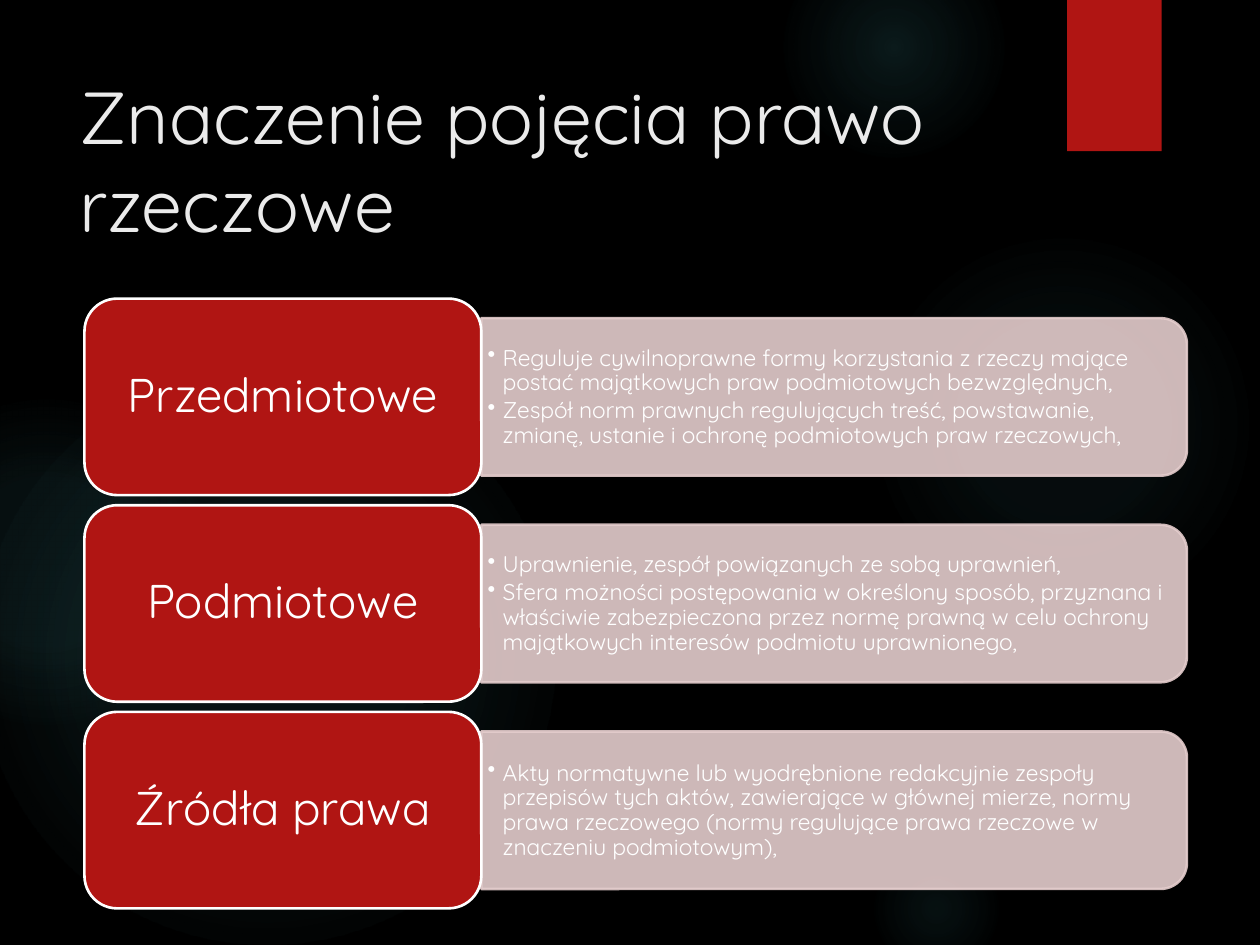
from typing import NamedTuple

from lxml import etree
from pptx import Presentation
from pptx import util as u
from pptx.dml.color import RGBColor
from pptx.enum import shapes, text
from pptx.oxml import parse_xml
from pptx.oxml.ns import nsdecls, qn

BLACK = RGBColor(0, 0, 0)
WHITE = RGBColor(255, 255, 255)
PALE = RGBColor(0xEB, 0xEB, 0xEB)
RED = RGBColor(0xB0, 0x15, 0x13)
PINK = RGBColor(0xE4, 0xCC, 0xCC)
TEAL = RGBColor(0x50, 0xB9, 0xC1)
FACE = "Quicksand"
KIND = shapes.MSO_SHAPE

# Row grid, in inches
TOP, PITCH = 2.37, 1.64
LEFT, LABEL_W, LABEL_H = 0.67, 3.15, 1.56
BODY_W, BODY_H = 5.6, 1.25


class Box(NamedTuple):
    x: float
    y: float
    w: float
    h: float


class Glow(NamedTuple):
    x: float
    y: float
    size: float
    stops: tuple  # (position %, opacity %)


class Row(NamedTuple):
    label: str
    points: list


GLOWS = [
    Glow(6.89, 1.83, 3.08, ((0, 7), (36, 6), (69, 0))),
    Glow(6.22, -0.5, 1.75, ((0, 14), (36, 7), (73, 0))),
    Glow(6.89, 6.67, 1.08, ((0, 9), (36, 5), (66, 0))),
    Glow(-0.17, 2.92, 4.58, ((0, 11), (36, 10), (75, 0))),
    Glow(-0.92, 3.17, 2.58, ((0, 8), (36, 8), (72, 0))),
]

ROWS = [
    Row("Przedmiotowe", [
        "Reguluje cywilnoprawne formy korzystania z rzeczy mające postać "
        "majątkowych praw podmiotowych bezwzględnych,",
        "Zespół norm prawnych regulujących treść, powstawanie, zmianę, "
        "ustanie i ochronę podmiotowych praw rzeczowych,",
    ]),
    Row("Podmiotowe", [
        "Uprawnienie, zespół powiązanych ze sobą uprawnień,",
        "Sfera możności postępowania w określony sposób, przyznana i "
        "właściwie zabezpieczona przez normę prawną w celu ochrony "
        "majątkowych interesów podmiotu uprawnionego,",
    ]),
    Row("Źródła prawa", [
        "Akty normatywne lub wyodrębnione redakcyjnie zespoły przepisów "
        "tych aktów, zawierające w głównej mierze, normy prawa rzeczowego "
        "(normy regulujące prawa rzeczowe w znaczeniu podmiotowym),",
    ]),
]


def place(box: Box) -> list:
    return [u.Inches(v) for v in box]


def draw(slide, kind, box: Box, fill=None, line=None, alpha=100):
    """Add a preset shape with a plain fill and an optional outline."""
    shape = slide.shapes.add_shape(kind, *place(box))
    shape.shadow.inherit = False
    if fill is not None:
        shape.fill.solid()
        shape.fill.fore_color.rgb = fill
    if line is None:
        shape.line.fill.background()
    else:
        shape.line.color.rgb = line
        shape.line.width = u.Pt(1.5)
    if alpha < 100:
        for tone in shape._element.spPr.iter(qn("a:srgbClr")):
            etree.SubElement(tone, qn("a:alpha"), val=str(alpha * 1000))
    return shape


def write(shape, lines: list, size=13, color=WHITE, align=text.PP_ALIGN.LEFT,
          pad=(0.1, 0.05), spacing=None, after=0, bullet=False):
    """Fill a shape or text box with formatted paragraphs."""
    frame = shape.text_frame
    frame.word_wrap = True
    frame.vertical_anchor = text.MSO_ANCHOR.MIDDLE
    frame.margin_left = frame.margin_right = u.Inches(pad[0])
    frame.margin_top = frame.margin_bottom = u.Inches(pad[1])
    for i, line in enumerate(lines):
        para = frame.add_paragraph() if i else frame.paragraphs[0]
        if bullet:
            props = para._p.get_or_add_pPr()
            props.set("marL", str(u.Inches(0.12)))
            props.set("indent", str(-u.Inches(0.12)))
            etree.SubElement(props, qn("a:buChar"), char="•")
        para.alignment = align
        para.line_spacing = spacing
        para.space_after = u.Pt(after)
        run = para.add_run()
        run.text = line
        run.font.name = FACE
        run.font.size = u.Pt(size)
        run.font.color.rgb = color


def add_glow(slide, glow: Glow) -> None:
    """Add a soft round light that fades outwards."""
    shape = draw(slide, KIND.OVAL, Box(glow.x, glow.y, glow.size, glow.size))
    stops = "".join(
        f'<a:gs pos="{pos * 1000}"><a:srgbClr val="{TEAL}">'
        f'<a:alpha val="{alpha * 1000}"/></a:srgbClr></a:gs>'
        for pos, alpha in glow.stops)
    fade = parse_xml(
        f'<a:gradFill {nsdecls("a")}><a:gsLst>{stops}</a:gsLst>'
        '<a:path path="circle"><a:fillToRect l="50000" t="50000" r="50000" '
        'b="50000"/></a:path></a:gradFill>')
    shape._element.spPr.find(qn("a:prstGeom")).addnext(fade)


def add_tab(slide) -> None:
    """Add the red tab at the top edge, with its soft shadow."""
    tab = draw(slide, KIND.RECTANGLE, Box(8.47, 0, 0.75, 1.2), RED)
    effects = tab._element.spPr.find(qn("a:effectLst"))
    effects.append(parse_xml(
        f'<a:outerShdw {nsdecls("a")} blurRad="{u.Pt(3)}" dist="{u.Pt(2)}" '
        f'dir="5400000" rotWithShape="0"><a:srgbClr val="{BLACK}">'
        '<a:alpha val="45000"/></a:srgbClr></a:outerShdw>'))


def add_row(slide, row: Row, top: float) -> None:
    """Add a red label and the pale panel to its right."""
    mid = top + LABEL_H / 2
    edge = LEFT + LABEL_W
    # The panel is an upright shape turned a quarter to the right
    panel = draw(slide, KIND.ROUND_2_SAME_RECTANGLE,
                 Box(edge + (BODY_W - BODY_H) / 2, mid - BODY_W / 2,
                     BODY_H, BODY_W), PINK, PINK, alpha=90)
    panel.rotation = 90
    note = slide.shapes.add_textbox(
        *place(Box(edge, mid - 0.56, BODY_W - 0.07, 1.13)))
    write(note, row.points, pad=(0.05, 0.03), spacing=0.9, after=2,
          bullet=True)
    label = draw(slide, KIND.ROUNDED_RECTANGLE,
                 Box(LEFT, top, LABEL_W, LABEL_H), RED, WHITE)
    write(label, [row.label], size=27, align=text.PP_ALIGN.CENTER,
          pad=(0.11, 0.06), spacing=0.9)


def main() -> None:
    deck = Presentation()
    deck.slide_width, deck.slide_height = u.Inches(10), u.Inches(7.5)
    slide = deck.slides.add_slide(deck.slide_layouts[6])

    # Backdrop
    slide.background.fill.solid()
    slide.background.fill.fore_color.rgb = BLACK
    for glow in GLOWS:
        add_glow(slide, glow)
    add_tab(slide)

    # Title
    title = slide.shapes.add_textbox(*place(Box(0.53, 0.5, 7.72, 1.53)))
    write(title, ["Znaczenie pojęcia prawo rzeczowe"], size=42, color=PALE)

    # Meanings
    for i, row in enumerate(ROWS):
        add_row(slide, row, TOP + i * PITCH)

    deck.save("out.pptx")


if __name__ == "__main__":
    main()
